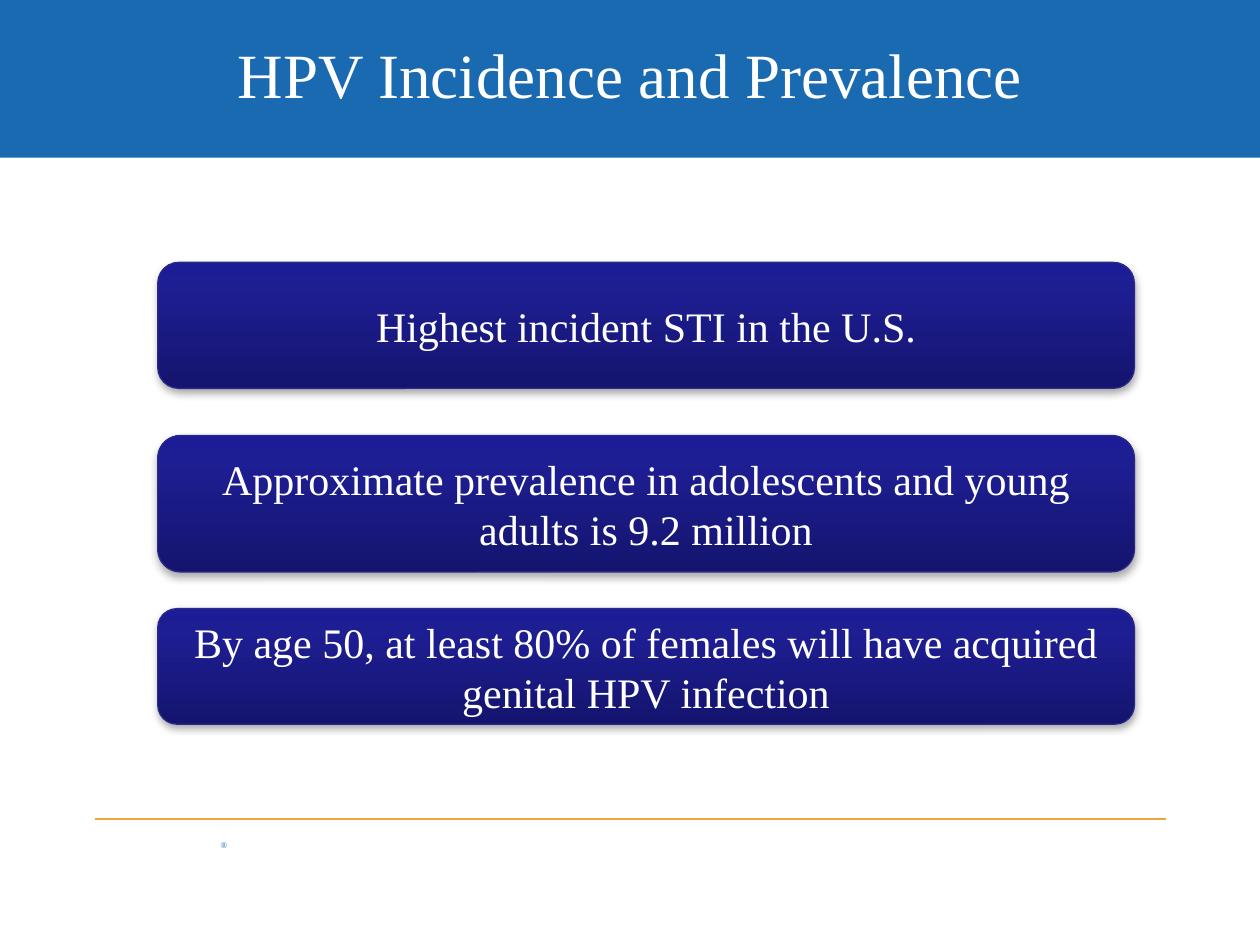
import copy

import lxml.etree
import pptx
import pptx.dml.color
import pptx.enum.shapes
import pptx.enum.text
import pptx.oxml.ns
import pptx.util

Cm = pptx.util.Cm
Pt = pptx.util.Pt
Kind = pptx.enum.shapes.MSO_SHAPE
Align = pptx.enum.text.PP_ALIGN
FACTS = [
    ("Highest incident STI in the U.S.", 2.54),
    ("Approximate prevalence in adolescents and young adults is 9.2 million", 2.75),
    ("By age 50, at least 80% of females will have acquired genital HPV infection", 2.33),
]
STOPS = [(0, "14146F"), (0.8, "1E1E93"), (1, "1C1C96")]


def paint(color, code):
    """Set a colour from a hex string."""
    color.rgb = pptx.dml.color.RGBColor.from_string(code)


def add(parent, tag, **attrs):
    """Append a drawing element to its parent."""
    return lxml.etree.SubElement(parent, pptx.oxml.ns.qn(tag), attrs)


def write(shape, text, size, code, align=Align.CENTER):
    """Put one styled paragraph into a shape."""
    frame = shape.text_frame
    frame.text = text
    frame.vertical_anchor = pptx.enum.text.MSO_ANCHOR.MIDDLE
    line = frame.paragraphs[0]
    line.alignment = align
    line.font.name = "Times New Roman"
    line.font.size = Pt(size)
    paint(line.font.color, code)


def shade(shape):
    """Give a shape the gradient fill and a soft drop shadow."""
    shape.fill.gradient()
    shape.fill.gradient_angle = 90
    last = shape.element.spPr.xpath(".//a:gs")[-1]
    last.addnext(copy.deepcopy(last))
    for stop, (pos, code) in zip(shape.fill.gradient_stops, STOPS):
        stop.position = pos
        paint(stop.color, code)
    shape.shadow.inherit = False
    effects = shape.element.spPr.find(pptx.oxml.ns.qn("a:effectLst"))
    drop = add(effects, "a:outerShdw", blurRad=str(Pt(5)), dist=str(Pt(1.8)),
               dir="5400000", rotWithShape="0")
    black = add(drop, "a:srgbClr", val="000000")
    add(black, "a:alpha", val="35000")


def header(slide, left, top, width, height):
    """Draw the title band with the title in it."""
    band = slide.shapes.add_shape(Kind.RECTANGLE, Cm(left), Cm(top), Cm(width), Cm(height))
    band.shadow.inherit = False
    band.fill.solid()
    paint(band.fill.fore_color, "196AB0")
    band.line.fill.background()
    title = slide.shapes.title
    title.element.addprevious(band.element)
    title.left, title.top = Cm(left + 1.27), Cm(top + 0.21)
    title.width, title.height = Cm(width - 2.54), Cm(2.54)
    write(title, "HPV Incidence and Prevalence", 36, "FFFFFF")


def facts(slide, left, top, width, pitch):
    """Stack the fact boxes at an even pitch."""
    for row, (text, height) in enumerate(FACTS):
        box = slide.shapes.add_shape(
            Kind.ROUNDED_RECTANGLE, Cm(left), Cm(top + row * pitch), Cm(width), Cm(height))
        shade(box)
        paint(box.line.color, "292989")
        box.line.width = Pt(0.75)
        write(box, text, 24, "FFFFFF")


def footer(slide, left, top, width):
    """Draw the footer rule and the small mark below it."""
    rule = slide.shapes.add_connector(
        pptx.enum.shapes.MSO_CONNECTOR.STRAIGHT,
        Cm(left), Cm(top), Cm(left + width), Cm(top))
    paint(rule.line.color, "EEA33C")
    rule.line.width = Pt(0.75)
    add(rule.element.spPr, "a:effectLst")
    mark = slide.shapes.add_textbox(Cm(left + 2.54), Cm(top + 0.43), Cm(0.64), Cm(0.2))
    frame = mark.text_frame
    frame.word_wrap = True
    frame.margin_left = frame.margin_right = frame.margin_top = frame.margin_bottom = 0
    write(mark, "®", 5, "196AB0", Align.LEFT)


def main():
    """Build and save the slide."""
    deck = pptx.Presentation()
    deck.slide_width, deck.slide_height = Cm(25.4), Cm(19.05)
    slide = deck.slides.add_slide(deck.slide_layouts[5])
    header(slide, 0, 0, 25.4, 3.18)
    footer(slide, 1.91, 16.51, 21.59)
    facts(slide, 3.18, 5.29, 19.69, 3.49)
    deck.save("out.pptx")


if __name__ == "__main__":
    main()
